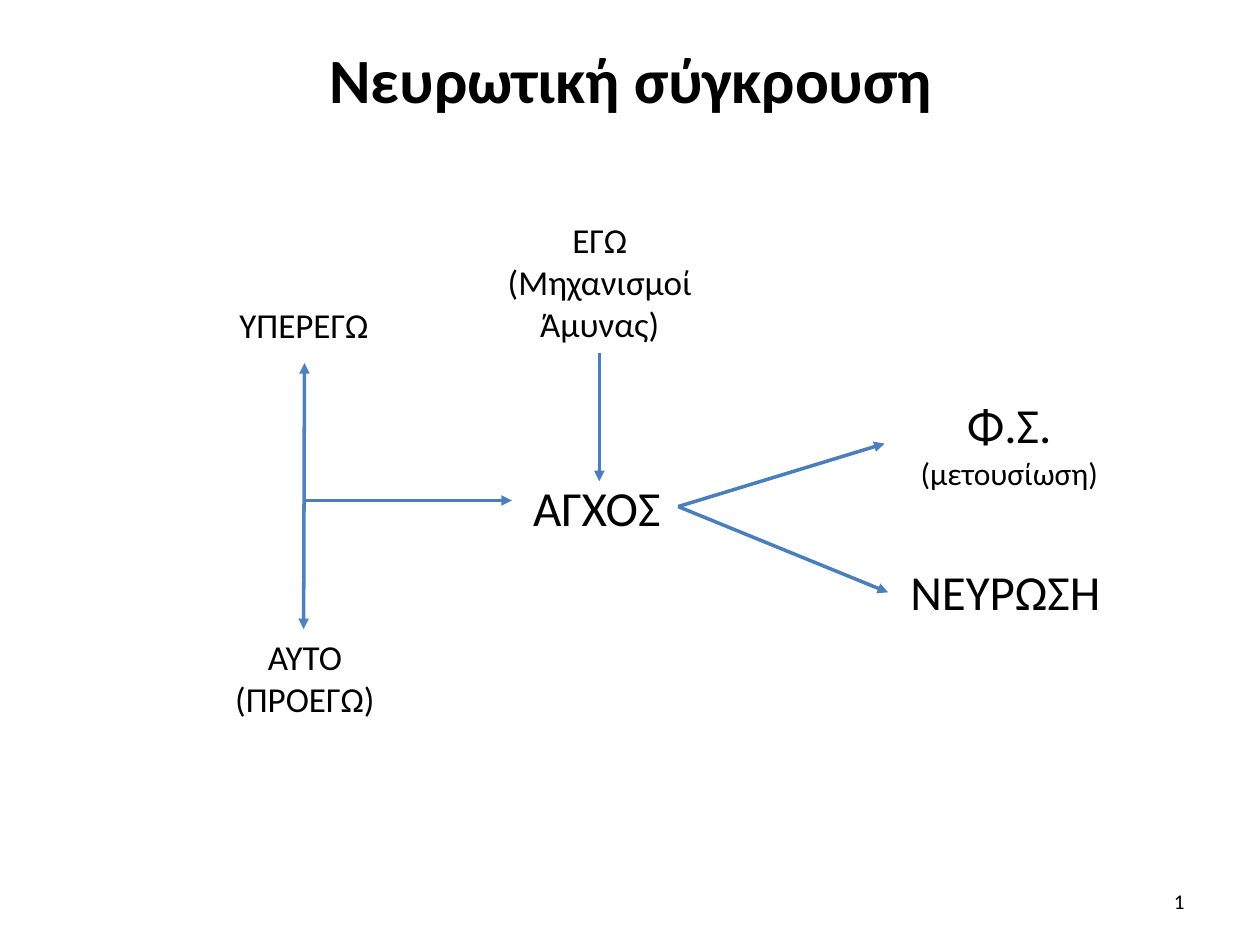
from lxml.etree import SubElement
from pptx import Presentation
from pptx.dml.color import RGBColor
from pptx.enum.shapes import MSO_CONNECTOR
from pptx.enum.text import MSO_ANCHOR, PP_ALIGN
from pptx.oxml.ns import qn
from pptx.util import Pt

FONT = "Calibri"
BLACK = "000000"
BLUE = "4B7EBC"
BRIGHT = "4F81BD"


def color(code):
    return RGBColor.from_string(code)


def write(shape, lines, align=PP_ALIGN.CENTER, anchor=MSO_ANCHOR.TOP,
          bold=False, wrap=True):
    """Fill a shape with (text, size) lines, one paragraph each."""
    frame = shape.text_frame
    frame.text = "\n".join(text for text, size in lines)
    frame.word_wrap = wrap
    frame.vertical_anchor = anchor
    for para, (text, size) in zip(frame.paragraphs, lines):
        para.alignment = align
        for run in para.runs:
            font = run.font
            font.name = FONT
            font.size = Pt(size)
            font.bold = bold
            font.color.rgb = color(BLACK)


def add_title(slide, text):
    title = slide.shapes.title
    title.left, title.top = Pt(36.5), Pt(9.5)
    title.width, title.height = Pt(648), Pt(71)
    write(title, [(text, 36)], anchor=MSO_ANCHOR.MIDDLE, bold=True)


def add_label(slide, box, *lines, **style):
    shape = slide.shapes.add_textbox(*(Pt(n) for n in box))
    write(shape, lines, **style)


def add_arrow(slide, start, end, code=BLUE, both=False):
    link = slide.shapes.add_connector(
        MSO_CONNECTOR.STRAIGHT, *(Pt(n) for n in start + end))
    link.line.color.rgb = color(code)
    link.line.width = Pt(2)
    props = link.line._get_or_add_ln()
    for tag in ("a:headEnd", "a:tailEnd") if both else ("a:tailEnd",):
        SubElement(props, qn(tag), type="triangle")
    SubElement(link._element.spPr, qn("a:effectLst"))


def main():
    deck = Presentation()
    deck.slide_width, deck.slide_height = Pt(720), Pt(540)
    slide = deck.slides.add_slide(deck.slide_layouts[5])
    add_title(slide, "Νευρωτική σύγκρουση")

    fork = (174, 286)
    source = (387.5, 289.5)
    add_arrow(slide, (174, 207.5), (173.5, 359.5), BRIGHT, both=True)
    add_arrow(slide, fork, (292.5, 286))
    add_arrow(slide, (342.5, 201.5), (342.5, 275))
    add_arrow(slide, source, (505.5, 253.5))
    add_arrow(slide, source, (507.5, 338.5))

    add_label(slide, (297.5, 269.5, 90, 41), ("ΑΓΧΟΣ", 28),
              align=PP_ALIGN.LEFT)
    add_label(slide, (505.5, 222, 142.5, 63.5),
              ("Φ.Σ.", 28), ("(μετουσίωση)", 18))
    add_label(slide, (507.5, 317.5, 134, 41), ("ΝΕΥΡΩΣΗ", 28))
    add_label(slide, (118, 359.5, 112.5, 55.5),
              ("ΑΥΤΟ", 20), ("(ΠΡΟΕΓΩ)", 20))
    add_label(slide, (279.5, 121.5, 126.5, 80),
              ("ΕΓΩ (Μηχανισμοί Άμυνας)", 20))
    add_label(slide, (129.5, 170, 88.5, 31.5), ("ΥΠΕΡΕΓΩ", 20), wrap=False)
    add_label(slide, (516, 500.5, 168, 29), ("1", 12),
              align=PP_ALIGN.RIGHT, anchor=MSO_ANCHOR.MIDDLE)
    deck.save("out.pptx")


if __name__ == "__main__":
    main()
